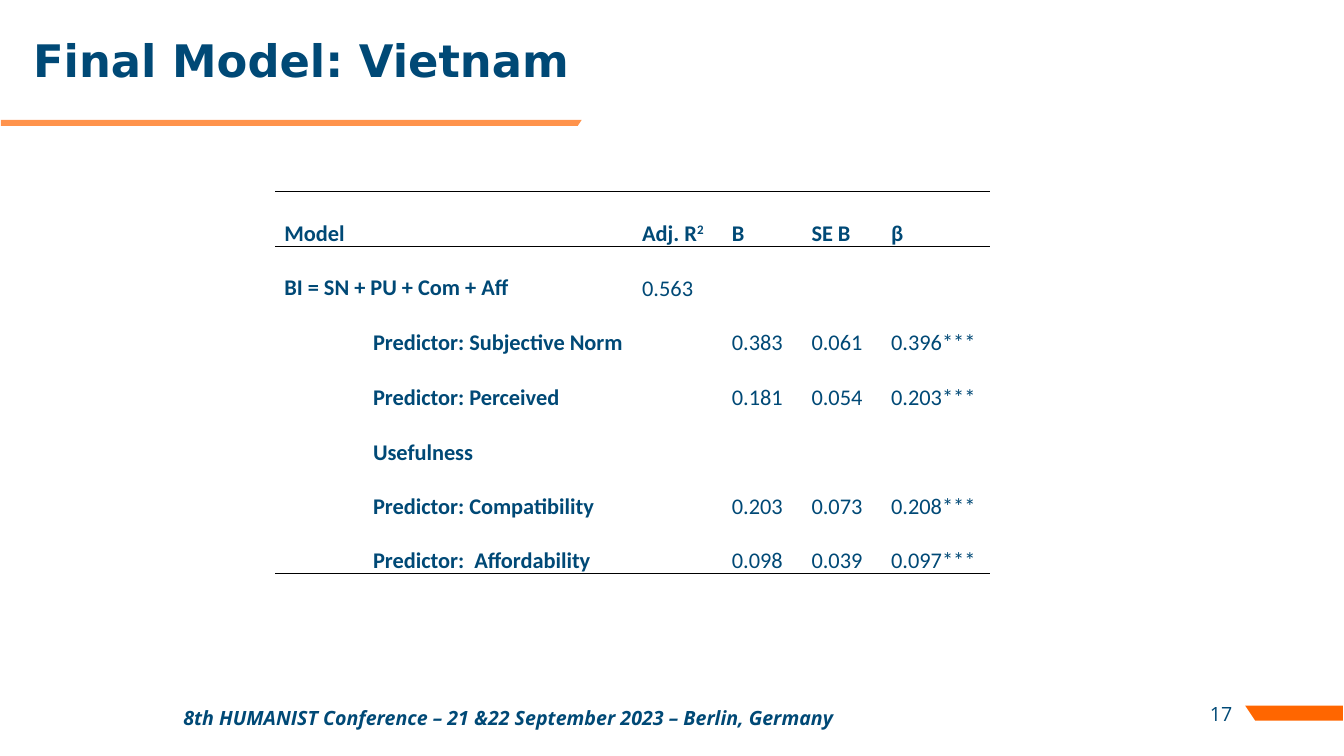
import pptx
import pptx.util
import pptx.dml.color
import pptx.enum.text
import pptx.oxml
import pptx.oxml.ns
from pptx.util import Inches

COLORS = {"navy": "004976", "orange": "FF6600", "rule": "000000"}
ALIGN = pptx.enum.text.PP_ALIGN
ANCHOR = pptx.enum.text.MSO_ANCHOR


def rgb(name):
    return pptx.dml.color.RGBColor.from_string(COLORS[name])


def style_font(font, name, size, bold=False, italic=False):
    font.name = name
    font.size = pptx.util.Pt(size)
    font.bold = bold
    font.italic = italic
    font.color.rgb = rgb("navy")


deck = pptx.Presentation()
deck.slide_width = Inches(13.33)
deck.slide_height = Inches(7.5)
page = deck.slides.add_slide(deck.slide_layouts[6])

# Orange accent bars, corners in hundredths of an inch, with opacity in percent
accents = [
    ([(1332, 700), (1332, 715), (1245, 715), (1235, 700)], 100),
    ([(1, 119), (1, 125), (573, 125), (577, 119)], 70),
]
for corners, opacity in accents:
    builder = page.shapes.build_freeform(*corners[0], scale=Inches(0.01))
    builder.add_line_segments(corners[1:], close=True)
    bar = builder.convert_to_shape()
    bar.shadow.inherit = False
    bar.fill.solid()
    bar.fill.fore_color.rgb = rgb("orange")
    bar.line.fill.background()
    if opacity < 100:
        color = bar.fill._xPr.find(".//" + pptx.oxml.ns.qn("a:srgbClr"))
        alpha = pptx.oxml.parse_xml(
            f'<a:alpha {pptx.oxml.ns.nsdecls("a")} val="{opacity * 1000}"/>')
        color.append(alpha)

# Title, footer and page number
labels = [
    ("Final Model: Vietnam", (0.23, 0.2, 12.73, 0.86), ANCHOR.MIDDLE,
     ALIGN.LEFT, 0.9, ("DejaVu Sans", 32, True)),
    ("8th HUMANIST Conference – 21 &22 September 2023 – Berlin, Germany",
     (1.72, 6.95, 8.06, 0.34), ANCHOR.TOP, ALIGN.LEFT, 1.0,
     ("Open Sans", 14, True, True)),
    ("17", (11.72, 6.88, 0.6, 0.4), ANCHOR.MIDDLE, ALIGN.RIGHT, 1.0,
     ("Open Sans", 14)),
]
for text, place, anchor, align, spacing, font in labels:
    box = page.shapes.add_textbox(*[Inches(value) for value in place])
    box.text_frame.word_wrap = True
    box.text_frame.vertical_anchor = anchor
    para = box.text_frame.paragraphs[0]
    para.text = text
    para.alignment = align
    para.line_spacing = spacing
    style_font(para.font, *font)

# Regression table
rows = [
    ["Model", "", "Adj. R", "B", "SE B", "β"],
    ["BI = SN + PU + Com + Aff", "", "0.563", "", "", ""],
    ["", "Predictor: Subjective Norm", "", "0.383", "0.061", "0.396***"],
    ["", "Predictor: Perceived Usefulness", "", "0.181", "0.054", "0.203***"],
    ["", "Predictor: Compatibility", "", "0.203", "0.073", "0.208***"],
    ["", "Predictor:  Affordability", "", "0.098", "0.039", "0.097***"],
]
widths = [0.88, 2.67, 0.89, 0.79, 0.79, 1.07]
heights = [0.4, 0.49, 0.49, 0.98, 0.49, 0.49]
last = len(rows) - 1
table = page.shapes.add_table(
    len(rows), len(widths), Inches(2.73), Inches(1.9),
    Inches(sum(widths)), Inches(sum(heights))).table
table.first_row = False
table.horz_banding = False
for column, width in zip(table.columns, widths):
    column.width = Inches(width)
for row, height in zip(table.rows, heights):
    row.height = Inches(height)
table.cell(1, 0).merge(table.cell(1, 1))

for i, row in enumerate(rows):
    for j, text in enumerate(row):
        cell = table.cell(i, j)
        cell.fill.background()
        cell.margin_left = cell.margin_right = Inches(0.09)
        cell.margin_top = Inches(0.01)
        cell.margin_bottom = 0
        bottom = i == 0 or (i == 1 and j == 0)
        cell.vertical_anchor = ANCHOR.BOTTOM if bottom else ANCHOR.TOP
        if text:
            para = cell.text_frame.paragraphs[0]
            para.text = text
            wraps = text.endswith("Usefulness")
            para.alignment = ALIGN.LEFT if wraps else ALIGN.JUSTIFY
            para.line_spacing = 2.0
            para.space_after = pptx.util.Pt(8)
            style_font(para.font, "Calibri", 16, bold=i == 0 or j < 2)
            if text == "Adj. R":
                span = para.add_run()
                span.text = "2"
                span.font._element.set("baseline", "30000")

        # Rules above and below the header and under the last row
        ruled = {"T": i < 2, "B": i in (0, last)}
        for position, side in enumerate("LRTB"):
            if ruled.get(side):
                paint = f'<a:solidFill><a:srgbClr val="{COLORS["rule"]}"/></a:solidFill>'
            else:
                paint = "<a:noFill/>"
            border = pptx.oxml.parse_xml(
                f'<a:ln{side} {pptx.oxml.ns.nsdecls("a")} w="12700">{paint}</a:ln{side}>')
            cell._tc.get_or_add_tcPr().insert(position, border)

deck.save("out.pptx")
